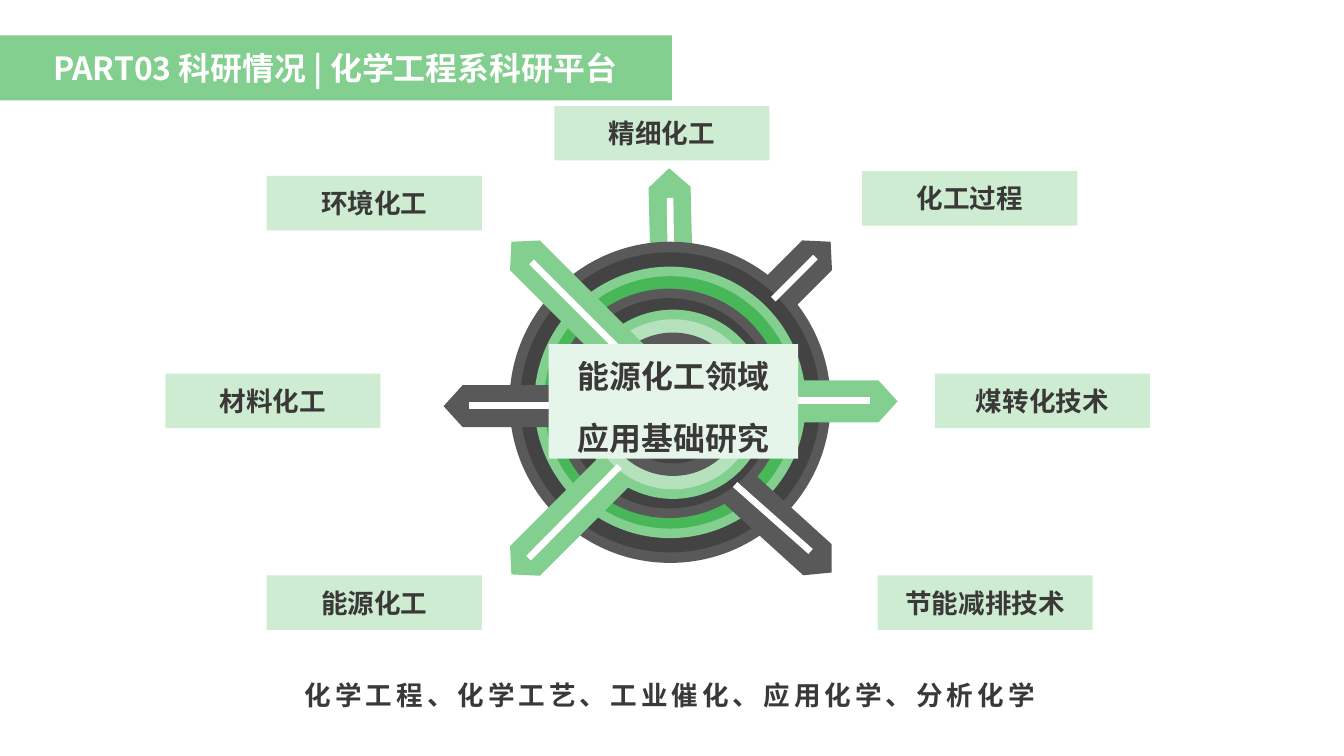
import math

import pptx
import pptx.dml.color
import pptx.enum.shapes
import pptx.enum.text
import pptx.oxml.ns
import pptx.util
from lxml import etree

Inches = pptx.util.Inches
RGBColor = pptx.dml.color.RGBColor
SHAPE = pptx.enum.shapes.MSO_SHAPE
ALIGN = pptx.enum.text.PP_ALIGN
ANCHOR = pptx.enum.text.MSO_ANCHOR
qn = pptx.oxml.ns.qn

WHITE = RGBColor(0xFF, 0xFF, 0xFF)
INK = RGBColor(0x3B, 0x38, 0x38)
GREEN = RGBColor(0x83, 0xCF, 0x8F)
DEEP_GREEN = RGBColor(0x47, 0xB7, 0x58)
SOFT_GREEN = RGBColor(0xB5, 0xE2, 0xBC)
LABEL_GREEN = RGBColor(0xCD, 0xEC, 0xD2)
PANEL_GREEN = RGBColor(0xE6, 0xF5, 0xE9)
GREY = RGBColor(0x59, 0x59, 0x59)
DARK_GREY = RGBColor(0x43, 0x43, 0x43)

FONT = "Noto Sans CJK SC"
ARROW_HALF_WIDTH = 0.22
ARROW_HEAD = 0.2
QUARTER = math.pi / 2

# Disc centre, radius, colour; inner radius, colour; arrow tip, angle; stripe ends
RINGS = [
    ((7.06, 4.16), 0.52, GREEN, None, None,
     (7, 1.76), 268.6, (7.04, 4.27), (7.01, 2.07)),
    ((7.01, 4.21), 1.68, GREY, 1.57, DARK_GREY,
     (8.69, 2.53), 315, (8.53, 2.69), (8.09, 3.13)),
    ((7.01, 4.21), 1.42, GREEN, 1.32, DEEP_GREEN,
     (9.39, 4.2), 0, (9.1, 4.19), (8.3, 4.19)),
    ((7, 4.22), 1.2, GREY, 1.1, DARK_GREY,
     (8.7, 5.99), 42.2, (8.48, 5.77), (7.69, 5.07)),
    ((7.04, 4.23), 0.99, GREEN, 0.89, SOFT_GREEN,
     (5.35, 6.01), 135, (5.53, 5.84), (6.48, 4.88)),
    ((7.04, 4.23), 0.75, GREY, 0.62, DARK_GREY,
     (4.64, 4.25), 180, (4.91, 4.24), (6.48, 4.24)),
    ((7.04, 4.23), 0.52, GREEN, None, None,
     (5.35, 2.53), 225, (7.04, 4.22), (5.56, 2.74)),
]

LABELS = [
    ("精细化工", 5.8, 1.11),
    ("化工过程", 9.02, 1.79),
    ("能源化工", 2.79, 6.02),
    ("材料化工", 1.73, 3.91),
    ("环境化工", 2.79, 1.84),
    ("节能减排技术", 9.18, 6.02),
    ("煤转化技术", 9.78, 3.91),
]


def paint(shape, colour):
    shape.shadow.inherit = False
    shape.fill.solid()
    shape.fill.fore_color.rgb = colour
    shape.line.fill.background()


def write(box, text, size, colour=INK, align=ALIGN.CENTER, spacing=0):
    box.text_frame.word_wrap = True
    box.text_frame.text = text
    for para in box.text_frame.paragraphs:
        para.alignment = align
        for span in para.runs:
            span.font.size = pptx.util.Pt(size)
            span.font.bold = True
            span.font.color.rgb = colour
            span.font.name = FONT
            # East Asian typeface and letter spacing
            properties = span._r.get_or_add_rPr()
            etree.SubElement(properties, qn("a:ea"), typeface=FONT)
            if spacing:
                properties.set("spc", str(spacing * 100))


def add_panel(page, text, left, top, width, height, colour, size):
    panel = page.shapes.add_shape(SHAPE.RECTANGLE, Inches(left), Inches(top),
                                  Inches(width), Inches(height))
    paint(panel, colour)
    write(panel, text, size)
    panel.text_frame.vertical_anchor = ANCHOR.MIDDLE
    return panel


def bend_segments(shape, centre, turns):
    """Turn the first segments of an outline into arcs around the centre."""
    middle_x = Inches(centre[0]) - shape.left
    middle_y = Inches(centre[1]) - shape.top
    points = list(shape._element.iter(qn("a:pt")))
    ends = [(int(point.get("x")), int(point.get("y"))) for point in points]
    for index in range(1, len(turns)):
        pull = 4 / 3 * math.tan((turns[index] - turns[index - 1]) / 4)
        (x0, y0), (x1, y1) = ends[index - 1], ends[index]
        handles = [(x0 - pull * (y0 - middle_y), y0 + pull * (x0 - middle_x)),
                   (x1 + pull * (y1 - middle_y), y1 - pull * (x1 - middle_x))]
        segment = points[index].getparent()
        curve = etree.Element(qn("a:cubicBezTo"))
        for x, y in handles + [(x1, y1)]:
            etree.SubElement(curve, qn("a:pt"), x=str(round(x)), y=str(round(y)))
        segment.getparent().replace(segment, curve)


def add_arrow_disc(shapes, centre, radius, tip, degrees):
    """A disc joined with an arrow that points along the angle."""
    angle = math.radians(degrees)
    cos, sin = math.cos(angle), math.sin(angle)
    dx, dy = tip[0] - centre[0], tip[1] - centre[1]
    offset = dy * cos - dx * sin
    start = angle + math.asin((offset + ARROW_HALF_WIDTH) / radius)
    end = angle + 2 * math.pi + math.asin((offset - ARROW_HALF_WIDTH) / radius)
    quarters = range(math.ceil(start / QUARTER), math.ceil(end / QUARTER))
    turns = [start] + [quarter * QUARTER for quarter in quarters] + [end]
    points = [(centre[0] + radius * math.cos(turn),
               centre[1] + radius * math.sin(turn)) for turn in turns]
    # Arrow head: shoulder, tip, shoulder
    for back, side in ((ARROW_HEAD, -ARROW_HALF_WIDTH), (0, 0),
                       (ARROW_HEAD, ARROW_HALF_WIDTH)):
        points.append((tip[0] - back * cos - side * sin,
                       tip[1] - back * sin + side * cos))
    outline = [(Inches(x), Inches(y)) for x, y in points]
    builder = shapes.build_freeform(*outline[0])
    builder.add_line_segments(outline[1:], close=True)
    shape = builder.convert_to_shape()
    bend_segments(shape, centre, turns)
    return shape


def add_stripe(shapes, start, end):
    stripe = shapes.add_connector(pptx.enum.shapes.MSO_CONNECTOR.STRAIGHT,
                                  *(Inches(value) for value in start + end))
    stripe.line.color.rgb = WHITE
    stripe.line.width = pptx.util.Pt(5)
    etree.SubElement(stripe._element.spPr, qn("a:effectLst"))


def add_ring(page, centre, radius, colour, inner_radius, inner_colour,
             tip, degrees, stripe_start, stripe_end):
    shapes = page.shapes.add_group_shape().shapes if inner_radius else page.shapes
    paint(add_arrow_disc(shapes, centre, radius, tip, degrees), colour)
    if inner_radius:
        size = Inches(2 * inner_radius)
        disc = shapes.add_shape(SHAPE.OVAL, Inches(centre[0] - inner_radius),
                                Inches(centre[1] - inner_radius), size, size)
        paint(disc, inner_colour)
    add_stripe(shapes, stripe_start, stripe_end)


def add_title(page):
    title = page.shapes.title
    title.left, title.top = Inches(-0.02), Inches(0.37)
    title.width, title.height = Inches(7.05), Inches(0.68)
    title.fill.solid()
    title.fill.fore_color.rgb = GREEN
    write(title, "PART03 科研情况 | 化学工程系科研平台", 24, WHITE)
    title.text_frame.vertical_anchor = ANCHOR.MIDDLE
    title.text_frame.auto_size = pptx.enum.text.MSO_AUTO_SIZE.NONE


def main():
    deck = pptx.Presentation()
    deck.slide_width, deck.slide_height = Inches(14.06), Inches(7.91)
    page = deck.slides.add_slide(deck.slide_layouts[5])
    add_title(page)

    # Nested discs with arrows
    for ring in RINGS:
        add_ring(page, *ring)

    # Research fields around the discs
    for text, left, top in LABELS:
        add_panel(page, text, left, top, 2.25, 0.57, LABEL_GREEN, 20)

    # Disciplines along the bottom
    footer = page.shapes.add_textbox(Inches(3.09), Inches(7.06),
                                     Inches(7.9), Inches(0.44))
    write(footer, "化学工程、化学工艺、工业催化、应用化学、分析化学", 20,
          align=ALIGN.LEFT, spacing=3)

    # Central topic
    topic = add_panel(page, "能源化工领域\n应用基础研究", 5.74, 3.6, 2.61, 1.2,
                      PANEL_GREEN, 24)
    topic.text_frame.vertical_anchor = ANCHOR.TOP
    for para in topic.text_frame.paragraphs:
        para.line_spacing = 1.2
        para.space_before = para.space_after = pptx.util.Pt(6)

    deck.save("out.pptx")


if __name__ == "__main__":
    main()
